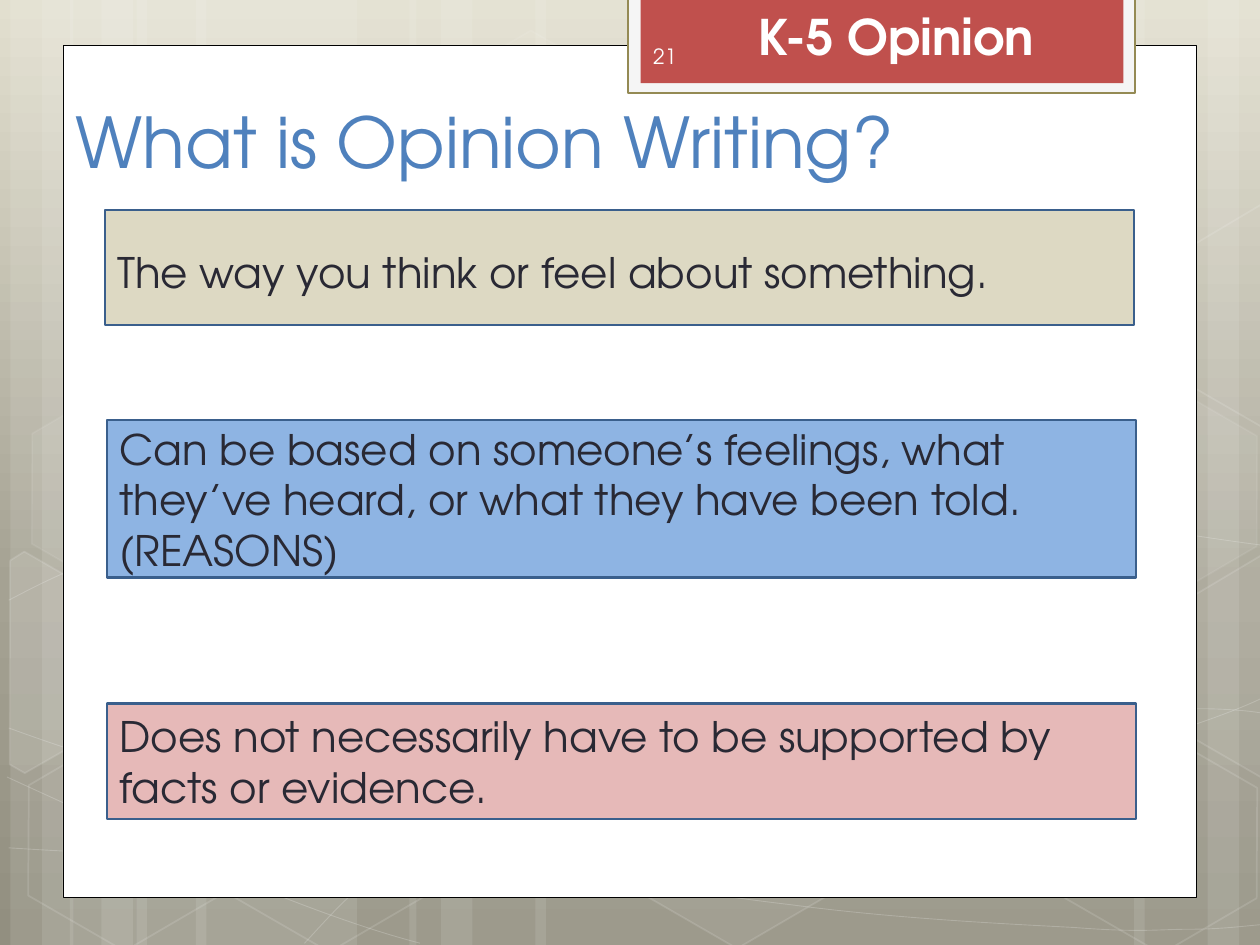
from copy import deepcopy
from lxml.etree import SubElement
from pptx import Presentation
from pptx.dml.color import RGBColor
from pptx.enum.shapes import MSO_SHAPE
from pptx.enum.text import MSO_ANCHOR, MSO_AUTO_SIZE, PP_ALIGN
from pptx.oxml.ns import qn
from pptx.util import Pt

WHITE = RGBColor(0xFF, 0xFF, 0xFF)
BLACK = RGBColor(0x00, 0x00, 0x00)
NEAR_WHITE = RGBColor(0xFE, 0xFE, 0xFE)
PALE_GREY = RGBColor(0xF5, 0xF5, 0xF5)
OLIVE = RGBColor(0x94, 0x8A, 0x54)
RED = RGBColor(0xC0, 0x50, 0x4D)
TITLE_BLUE = RGBColor(0x4F, 0x81, 0xBD)
BORDER_BLUE = RGBColor(0x3A, 0x5F, 0x8C)
INK = RGBColor(0x29, 0x29, 0x34)
TAN = RGBColor(0xDD, 0xD9, 0xC3)
SKY = RGBColor(0x8E, 0xB4, 0xE3)
PINK = RGBColor(0xE6, 0xB9, 0xB8)
BACKDROP = [(0, RGBColor(0xE2, 0xDF, 0xCF)),
            (0.62, RGBColor(0xA5, 0xA2, 0x93)),
            (1, RGBColor(0x92, 0x8F, 0x80))]
FONT = "TeX Gyre Adventor"


def paint(shape, fill=None, line=None, width=1, fill_alpha=100, line_alpha=100):
    shape.shadow.inherit = False
    if line is not None:
        shape.line.width = Pt(width)
    for target, color, alpha, place in (
            (shape.fill, fill, fill_alpha, "./a:solidFill/a:srgbClr"),
            (shape.line.fill, line, line_alpha, "./a:ln/a:solidFill/a:srgbClr")):
        if color is None or alpha == 0:
            target.background()
            continue
        target.solid()
        target.fore_color.rgb = color
        if alpha < 100:
            tint = shape._element.spPr.xpath(place)[0]
            SubElement(tint, qn("a:alpha"), val=str(alpha * 1000))


def write(shape, text, color, anchor, **formats):
    frame = shape.text_frame
    frame.word_wrap = True
    frame.auto_size = MSO_AUTO_SIZE.NONE
    frame.vertical_anchor = anchor
    para = frame.paragraphs[0]
    para.alignment = PP_ALIGN.LEFT
    span = para.add_run()
    span.text = text
    for name, value in {"name": FONT, **formats}.items():
        setattr(span.font, name, value)
    span.font.color.rgb = color


deck = Presentation()
deck.slide_width, deck.slide_height = Pt(720), Pt(540)
page = deck.slides.add_slide(deck.slide_layouts[5])
shapes = page.shapes

backdrop = page.background.fill
backdrop.gradient()
backdrop.gradient_angle = 270
first_stop = next(page.element.iter(qn("a:gs")))
first_stop.addnext(deepcopy(first_stop))
for stop, (position, color) in zip(backdrop.gradient_stops, BACKDROP):
    stop.position = position
    stop.color.rgb = color

bands = [(78, 126, 0), (6, 36, 0), (24, 60, 0), (112, 126, 0), (40, 36, 0), (58, 60, 0),
         (528, 126, 180), (690, 36, 180), (648, 60, 180),
         (306, 222, 0), (234, 36, 0), (252, 60, 0)]
for left, width, rotation in bands:
    band = shapes.add_shape(MSO_SHAPE.RECTANGLE, Pt(left), 0, Pt(width), Pt(540))
    band.rotation = rotation
    paint(band, WHITE, fill_alpha=10)

curves = [
    [(5, 484.5), (44, 487), (83, 489), (137, 488), (191, 487), (258, 486), (330, 479),
     (402, 472), (504, 458), (570, 444), (636, 431), (703, 409), (725, 397)],
    [(5, 343), (26, 332), (47, 321), (87, 310), (128, 300), (186, 284), (250, 279),
     (314, 274), (392, 273), (471, 279), (550, 284), (682, 307), (725, 312)],
    [(4, 444), (91, 484), (178, 523), (240, 539)],
    [(5, 416), (27, 424), (50, 432), (92, 444), (134, 454), (197, 472), (257, 485),
     (317, 497), (392, 510), (452, 517), (512, 525), (576, 528), (614, 530),
     (652, 533), (662, 531), (680, 531), (699, 531), (712, 529), (725, 528)],
    [(174, 539), (187, 525), (200, 510), (217, 498), (235, 485), (259, 470), (279, 460),
     (300, 450), (312, 446), (338, 438), (364, 431), (413, 421), (438, 416),
     (464, 411), (467, 411), (490, 410), (512, 408), (547, 405), (572, 405),
     (597, 404), (638, 405), (638, 405), (654, 405), (670, 405), (686, 405),
     (699, 405), (711, 406), (718, 407), (724, 408), (722, 407), (724, 408)],
]
for knots in curves:
    start, *points = [(Pt(x), Pt(y)) for x, y in knots]
    builder = shapes.build_freeform(*start)
    builder.add_line_segments(points, close=False)
    curve = builder.convert_to_shape()
    outline = curve._element.spPr.xpath(".//a:path")[0]
    for index, segment in enumerate(outline.findall(qn("a:lnTo"))):
        if index % 3 == 0:
            bend = SubElement(outline, qn("a:cubicBezTo"))
        bend.append(segment[0])
        outline.remove(segment)
    paint(curve, line=WHITE, width=0.5, line_alpha=20)

hexagons = [(240.5, 26, 4, 8), (358, 424, 6, 12), (8, 425.5, 0, 12),
            (10, 224.5, 7, 8), (125, 426, 0, 12), (542, 326, 10, 12),
            (600.5, 427, 0, 12), (600.5, 226, 7, 8)]
for left, top, fill_alpha, line_alpha in hexagons:
    hexagon = shapes.add_shape(MSO_SHAPE.HEXAGON, Pt(left), Pt(top), Pt(126), Pt(109.5))
    hexagon.adjustments[0] = 0.285
    hexagon.rotation = 30
    paint(hexagon, WHITE, WHITE, fill_alpha=fill_alpha, line_alpha=line_alpha)

LEFT_CUT = [(0, 8.5), (4.5, 0), (68, 0), (99.5, 55.5), (68, 109.5), (58, 109.5)]
RIGHT_CUT = [(0, 54.5), (30.5, 0), (37.5, 0), (98, 104), (94.5, 109.5), (31.5, 109.5)]
cut_hexagons = [(-24, 330.5, 10, LEFT_CUT), (660, 319.5, 4, RIGHT_CUT),
                (660, 119, 0, RIGHT_CUT)]
for left, top, fill_alpha, corners in cut_hexagons:
    start, *points = [(Pt(left + x), Pt(top + y)) for x, y in corners]
    builder = shapes.build_freeform(*start)
    builder.add_line_segments(points, close=True)
    cut_hexagon = builder.convert_to_shape()
    cut_hexagon.rotation = 30
    paint(cut_hexagon, WHITE, WHITE, fill_alpha=fill_alpha, line_alpha=12)

panels = [(36, 26, 648, 487, WHITE, BLACK, 0.5),
          (359, -1.5, 289.5, 54.8, PALE_GREY, OLIVE, 1.25),
          (366, -1.5, 276, 49, RED, None, 0)]
for left, top, width, height, fill, line, weight in panels:
    panel = shapes.add_shape(MSO_SHAPE.RECTANGLE, Pt(left), Pt(top), Pt(width), Pt(height))
    paint(panel, fill, line, weight)

title = shapes.title
title.left, title.top, title.width, title.height = Pt(36), Pt(18), Pt(553), Pt(90)
write(title, "What is Opinion Writing?", TITLE_BLUE, MSO_ANCHOR.BOTTOM, size=Pt(40))
title._element.getparent().append(title._element)

statements = [
    (60, 120, 66, 8.6, TAN, "The way you think or feel about something."),
    (61.2, 240, 90, 3.6, SKY, "Can be based on someone’s feelings, what they’ve heard, "
                              "or what they have been told. (REASONS)"),
    (61.2, 402, 66, 3.6, PINK, "Does not necessarily have to be supported by facts or evidence."),
]
for left, top, height, inset, fill, text in statements:
    box = shapes.add_shape(MSO_SHAPE.RECTANGLE, Pt(left), Pt(top), Pt(588), Pt(height))
    paint(box, fill, BORDER_BLUE, 1.25)
    write(box, text, INK, MSO_ANCHOR.MIDDLE, size=Pt(24))
    box.text_frame.margin_top = Pt(inset)

tag = shapes.add_textbox(Pt(426.4), 0, Pt(189.5), Pt(41))
write(tag, "K-5 Opinion", WHITE, MSO_ANCHOR.TOP, size=Pt(28), bold=True)
number = shapes.add_textbox(Pt(366.2), Pt(17.6), Pt(105), Pt(29))
write(number, "21", NEAR_WHITE, MSO_ANCHOR.MIDDLE, size=Pt(12))

deck.save("out.pptx")
